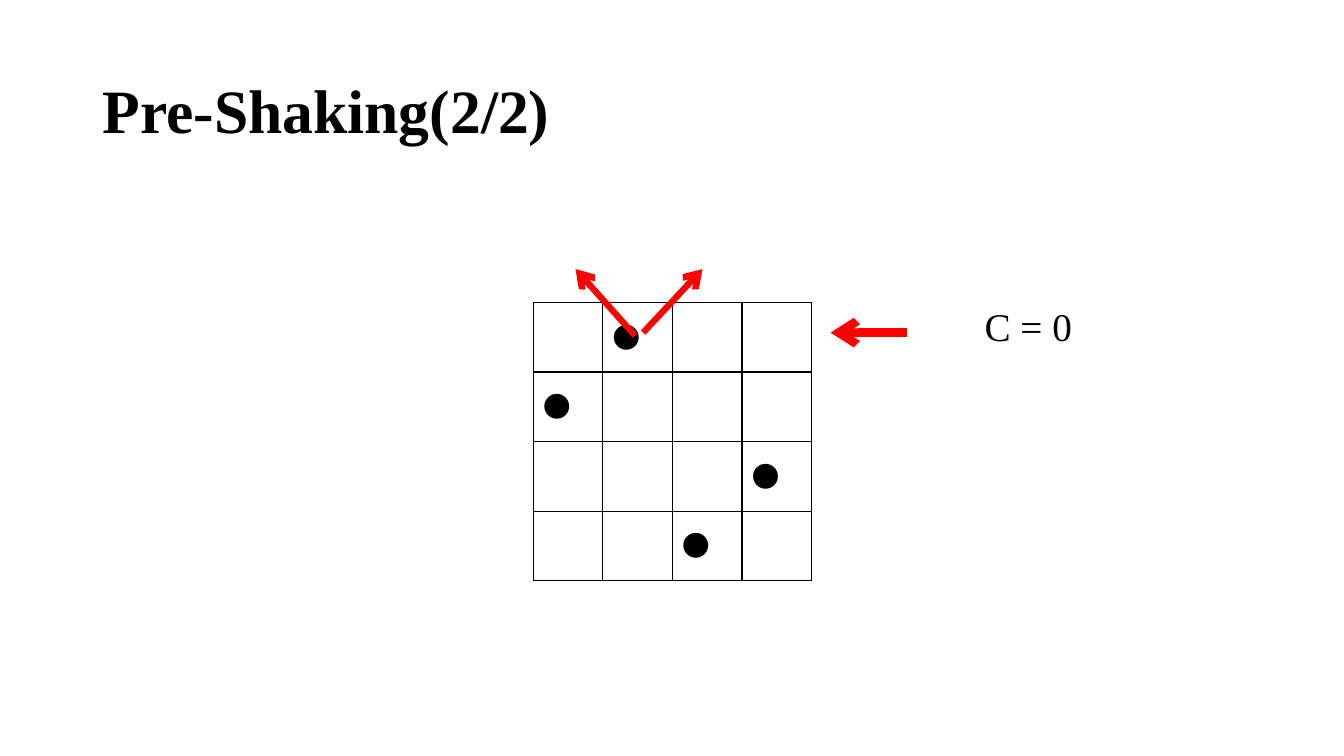
from dataclasses import dataclass

from lxml.etree import SubElement
from pptx import Presentation
from pptx.dml.color import RGBColor
from pptx.enum.shapes import MSO_CONNECTOR
from pptx.enum.text import MSO_ANCHOR, PP_ALIGN
from pptx.oxml import parse_xml
from pptx.oxml.ns import nsdecls, qn
from pptx.util import Pt


@dataclass(frozen=True)
class Theme:
    text_font: str = "Times New Roman"
    queen_font: str = "Calibri"
    ink: str = "000000"
    arrow: str = "FF0000"
    title_size: int = 44
    label_size: int = 28
    queen_size: int = 32


THEME = Theme()
BOARD_LEFT, BOARD_TOP, CELL_SIZE = 380.9, 216, 49.7
QUEEN_COLUMNS = (1, 0, 3, 2)
BORDER_TAGS = ("lnL", "lnR", "lnT", "lnB")


def style_paragraph(paragraph, name, size, bold=False):
    paragraph.font.name = name
    paragraph.font.size = Pt(size)
    paragraph.font.bold = bold
    paragraph.font.color.rgb = RGBColor.from_string(THEME.ink)


def add_title(slide, text):
    title = slide.shapes.title
    title.left, title.top, title.width, title.height = Pt(66), Pt(28.8), Pt(828), Pt(104.4)
    title.text_frame.text = text
    title.text_frame.vertical_anchor = MSO_ANCHOR.MIDDLE
    paragraph = title.text_frame.paragraphs[0]
    paragraph.alignment = PP_ALIGN.LEFT
    paragraph.line_spacing = 0.9
    style_paragraph(paragraph, THEME.text_font, THEME.title_size, bold=True)


def set_borders(cell):
    properties = cell._tc.get_or_add_tcPr()
    for index, tag in enumerate(BORDER_TAGS):
        border = parse_xml(
            f'<a:{tag} {nsdecls("a")} w="{Pt(1)}"><a:solidFill>'
            f'<a:srgbClr val="{THEME.ink}"/></a:solidFill></a:{tag}>'
        )
        properties.insert(index, border)


def add_board(slide, queen_columns):
    count = len(queen_columns)
    side = Pt(CELL_SIZE * count)
    table = slide.shapes.add_table(
        count, count, Pt(BOARD_LEFT), Pt(BOARD_TOP), side, side
    ).table
    table.first_row = False
    table.horz_banding = False
    for row, queen_column in enumerate(queen_columns):
        table.rows[row].height = Pt(CELL_SIZE)
        table.columns[row].width = Pt(CELL_SIZE)
        queen = table.cell(row, queen_column)
        queen.text = "⚫"
        style_paragraph(queen.text_frame.paragraphs[0], THEME.queen_font, THEME.queen_size)
    for cell in table.iter_cells():
        cell.fill.background()
        set_borders(cell)


def add_arrow(slide, start, tip, width):
    connector = slide.shapes.add_connector(
        MSO_CONNECTOR.STRAIGHT, *(Pt(value) for value in (*start, *tip))
    )
    connector.line.color.rgb = RGBColor.from_string(THEME.arrow)
    connector.line.width = Pt(width)
    properties = connector._element.spPr
    SubElement(properties.find(qn("a:ln")), qn("a:tailEnd"), type="arrow")
    SubElement(properties, qn("a:effectLst"))


def add_label(slide, text, left, top, width, height):
    label = slide.shapes.add_textbox(Pt(left), Pt(top), Pt(width), Pt(height))
    label.text_frame.word_wrap = True
    label.text_frame.text = text
    paragraph = label.text_frame.paragraphs[0]
    paragraph.line_spacing = 0.9
    paragraph.space_before = Pt(10)
    style_paragraph(paragraph, THEME.text_font, THEME.label_size)


def main():
    presentation = Presentation()
    presentation.slide_width = Pt(960)
    presentation.slide_height = Pt(540)
    slide = presentation.slides.add_slide(presentation.slide_layouts[5])
    add_title(slide, "Pre-Shaking(2/2)")
    add_board(slide, QUEEN_COLUMNS)
    add_arrow(slide, (648, 237.6), (593.3, 237.6), 6)
    add_arrow(slide, (459.4, 237.6), (501.8, 192.2), 4.5)
    add_arrow(slide, (453.6, 239.8), (411.1, 192.2), 4.5)
    add_label(slide, "C = 0", 696.2, 216, 105.1, 45.4)
    presentation.save("out.pptx")


if __name__ == "__main__":
    main()
